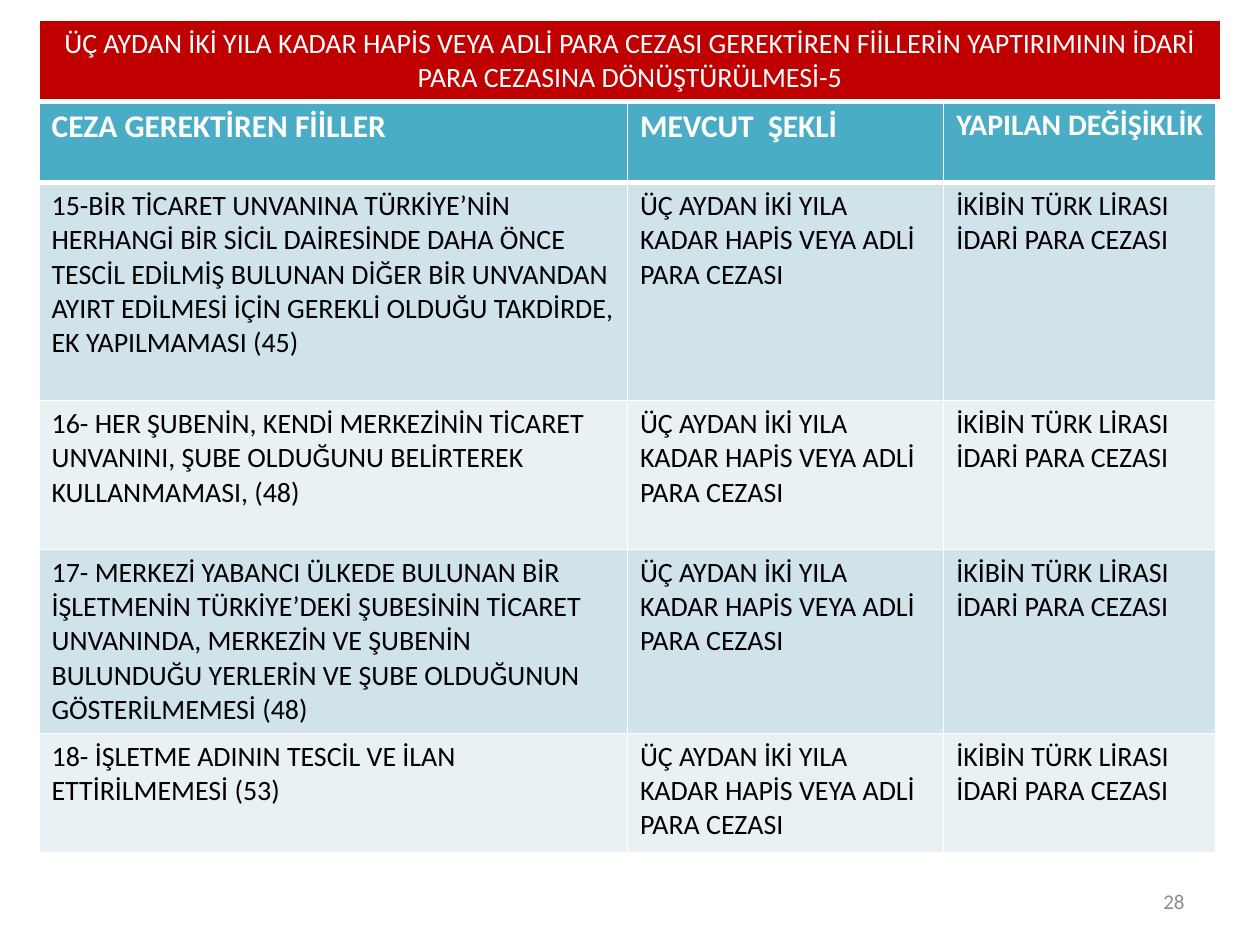
from dataclasses import dataclass

from lxml.etree import SubElement
from pptx import Presentation
from pptx.dml.color import RGBColor as RGB
from pptx.enum.text import MSO_ANCHOR as ANCHOR, PP_ALIGN as ALIGN
from pptx.oxml.ns import qn
from pptx.util import Inches, Pt


@dataclass(frozen=True)
class Theme:
    font: str = "Calibri"
    white: str = "FFFFFF"
    black: str = "000000"
    grey: str = "8C8C8C"
    red: str = "C00000"
    teal: str = "4BACC6"
    bands: tuple = ("D0E3EA", "E9F1F5")
    header_size: int = 18
    narrow_header_size: int = 17
    body_size: int = 16
    number_size: int = 12


theme = Theme()


def write_text(text_frame, text, size, color, bold=False, align=ALIGN.LEFT):
    text_frame.text = text
    paragraph = text_frame.paragraphs[0]
    paragraph.alignment = align
    font = paragraph.runs[0].font
    font.name, font.size, font.bold = theme.font, Pt(size), bold
    font.color.rgb = RGB.from_string(color)


def style_cell(cell, fill, bottom_width=1):
    properties = cell._tc.get_or_add_tcPr()
    for side, width in (("L", 1), ("R", 1), ("T", 1), ("B", bottom_width)):
        line = SubElement(properties, qn(f"a:ln{side}"), w=str(Pt(width)))
        solid = SubElement(line, qn("a:solidFill"))
        SubElement(solid, qn("a:srgbClr"), val=theme.white)
    cell.fill.solid()
    cell.fill.fore_color.rgb = RGB.from_string(fill)


presentation = Presentation()
presentation.slide_width, presentation.slide_height = Inches(10), Inches(7.5)
slide = presentation.slides.add_slide(presentation.slide_layouts[6])

# Penalty table
headers = ["CEZA GEREKTİREN FİİLLER", "MEVCUT  ŞEKLİ", "YAPILAN DEĞİŞİKLİK"]
offences = [
    "15-BİR TİCARET UNVANINA TÜRKİYE’NİN HERHANGİ BİR SİCİL DAİRESİNDE DAHA ÖNCE "
    "TESCİL EDİLMİŞ BULUNAN DİĞER BİR UNVANDAN AYIRT EDİLMESİ İÇİN GEREKLİ OLDUĞU "
    "TAKDİRDE, EK YAPILMAMASI (45)",
    "16- HER ŞUBENİN, KENDİ MERKEZİNİN TİCARET UNVANINI, ŞUBE OLDUĞUNU BELİRTEREK "
    "KULLANMAMASI, (48)",
    "17- MERKEZİ YABANCI ÜLKEDE BULUNAN BİR İŞLETMENİN TÜRKİYE’DEKİ ŞUBESİNİN TİCARET "
    "UNVANINDA, MERKEZİN VE ŞUBENİN BULUNDUĞU YERLERİN VE ŞUBE OLDUĞUNUN "
    "GÖSTERİLMEMESİ (48)",
    "18- İŞLETME ADININ TESCİL VE İLAN ETTİRİLMEMESİ (53)",
]
current_penalty = "ÜÇ AYDAN İKİ YILA KADAR HAPİS VEYA ADLİ PARA CEZASI"
new_penalty = "İKİBİN TÜRK LİRASI İDARİ PARA CEZASI"
column_widths = [4.67, 2.51, 2.16]
row_heights = [0.65, 1.73, 1.18, 1.46, 0.95]

table = slide.shapes.add_table(
    len(row_heights), len(column_widths), Inches(0.31), Inches(0.8),
    Inches(sum(column_widths)), Inches(sum(row_heights))).table
for column, width in zip(table.columns, column_widths):
    column.width = Inches(width)
for row, height in zip(table.rows, row_heights):
    row.height = Inches(height)

header_sizes = [theme.header_size, theme.header_size, theme.narrow_header_size]
for cell, text, size in zip(table.rows[0].cells, headers, header_sizes):
    style_cell(cell, theme.teal, bottom_width=3)
    write_text(cell.text_frame, text, size, theme.white, bold=True)

for index, offence in enumerate(offences):
    texts = (offence, current_penalty, new_penalty)
    for cell, text in zip(table.rows[index + 1].cells, texts):
        style_cell(cell, theme.bands[index % 2])
        write_text(cell.text_frame, text, theme.body_size, theme.black)

# Title band, a one-cell table
title_table = slide.shapes.add_table(
    1, 1, Inches(0.31), Inches(0.16), Inches(9.38), Inches(0.63)).table
title_cell = title_table.cell(0, 0)
style_cell(title_cell, theme.red, bottom_width=3)
write_text(
    title_cell.text_frame,
    "ÜÇ AYDAN İKİ YILA KADAR HAPİS VEYA ADLİ PARA CEZASI GEREKTİREN FİİLLERİN "
    "YAPTIRIMININ İDARİ PARA CEZASINA DÖNÜŞTÜRÜLMESİ-5",
    theme.body_size, theme.white, align=ALIGN.CENTER)

# Slide number
number_box = slide.shapes.add_textbox(
    Inches(7.17), Inches(6.95), Inches(2.33), Inches(0.4))
number_box.text_frame.word_wrap = True
number_box.text_frame.vertical_anchor = ANCHOR.MIDDLE
write_text(number_box.text_frame, "28", theme.number_size, theme.grey, align=ALIGN.RIGHT)

presentation.save("out.pptx")
